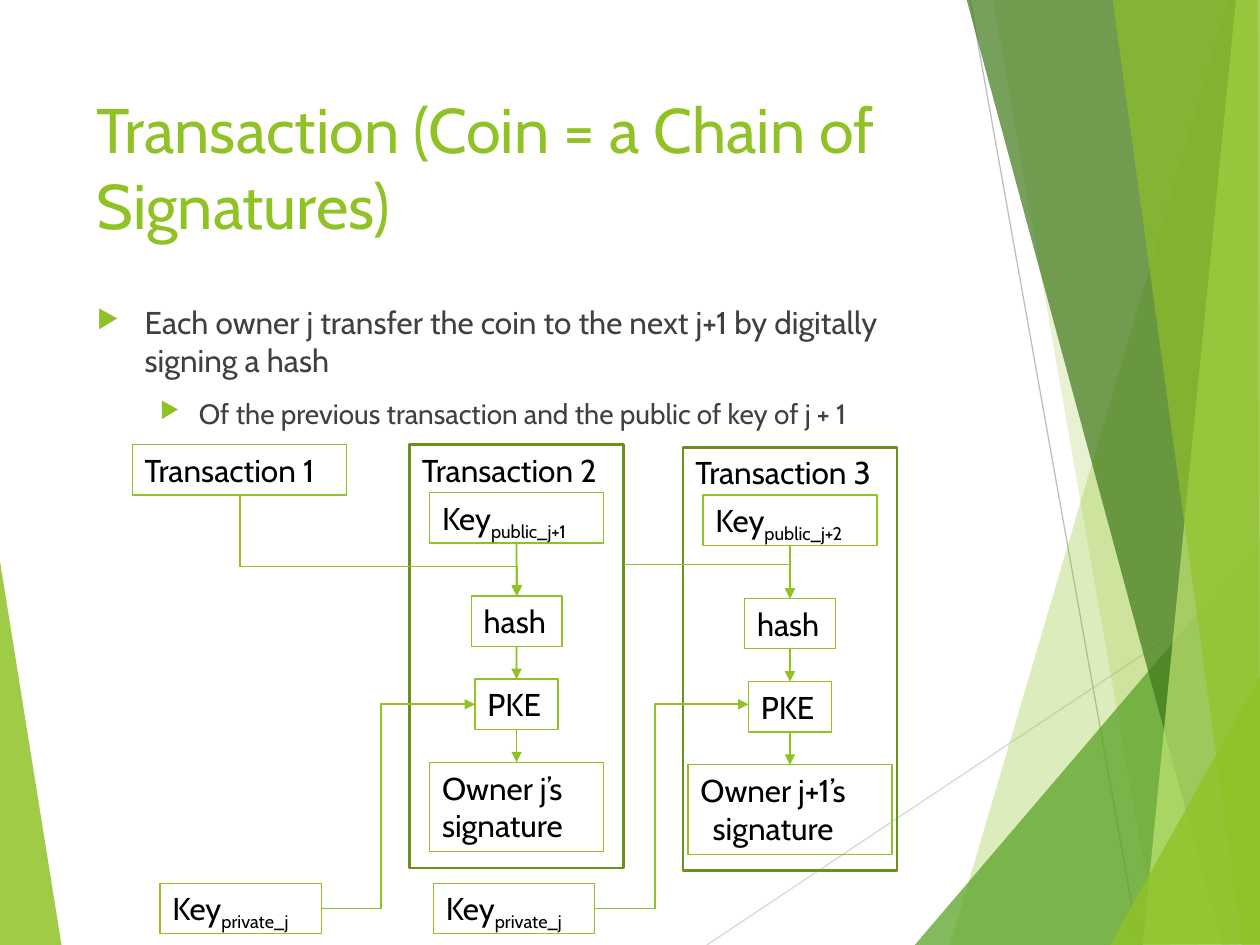
import pptx
import pptx.dml.color
import pptx.enum.shapes
import pptx.enum.text
import pptx.oxml
import pptx.oxml.ns
import pptx.util

Inches = pptx.util.Inches
Pt = pptx.util.Pt
RGBColor = pptx.dml.color.RGBColor
qn = pptx.oxml.ns.qn
CONNECTOR = pptx.enum.shapes.MSO_CONNECTOR
CENTER = pptx.enum.text.PP_ALIGN.CENTER
TOP, LEFT, BOTTOM, RIGHT = range(4)

LIME = RGBColor(0x90, 0xC2, 0x26)
GREEN = RGBColor(0x54, 0xA0, 0x21)
FOREST = RGBColor(0x3F, 0x78, 0x19)
PALE = RGBColor(0xC0, 0xE4, 0x74)
OLIVE = RGBColor(0x6B, 0x90, 0x1C)
SILVER = RGBColor(0xD9, 0xD9, 0xD9)
GRAY = RGBColor(0xBF, 0xBF, 0xBF)
CHARCOAL = RGBColor(0x40, 0x40, 0x40)
BLACK = RGBColor(0, 0, 0)

LABEL_FRAME = {
    "word_wrap": False,
    "auto_size": pptx.enum.text.MSO_AUTO_SIZE.SHAPE_TO_FIT_TEXT,
}
PROSE_FRAME = {
    "word_wrap": True,
    "auto_size": pptx.enum.text.MSO_AUTO_SIZE.NONE,
    "vertical_anchor": pptx.enum.text.MSO_ANCHOR.TOP,
}

LEFT_FACET = (LIME, 85, [(-0.01, 4.39), (0.49, 7.51), (-0.01, 7.5)])
RIGHT_FACETS = [
    (LIME, 30, [(9.75, 0), (7.54, 7.5), (10.02, 7.51), (10.01, 0.01)]),
    (LIME, 20, [(7.88, -0.01), (9.19, 7.5), (10.01, 7.5), (10.01, -0.01)]),
    (GREEN, 72, [(7.26, 7.5), (10, 4.29), (10.01, 7.5)]),
    (FOREST, 70, [(7.67, -0.01), (9.7, 7.5), (10.01, 7.49), (10.01, -0.01)]),
    (PALE, 70, [(9.81, -0.01), (9.07, 7.5), (10.01, 7.5), (10, -0.01)]),
    (LIME, 65, [(8.83, -0.01), (9.86, 7.5), (10, 7.5), (9.98, -0.01)]),
    (LIME, 80, [(8.81, 7.5), (10.01, 5.35), (10.01, 7.49)]),
]


def set_values(target, values):
    for name, value in values.items():
        setattr(target, name, value)


def add_child(parent, tag, **attributes):
    child = parent.makeelement(qn(tag), attributes)
    parent.append(child)
    return child


def add_facet(slide, color, opacity, corners):
    points = [(Inches(x), Inches(y)) for x, y in corners]
    builder = slide.shapes.build_freeform(*points[0])
    builder.add_line_segments(points[1:], close=True)
    facet = builder.convert_to_shape()
    facet.shadow.inherit = False
    facet.fill.solid()
    facet.fill.fore_color.rgb = color
    facet.line.fill.background()
    tint = next(facet.fill._xPr.iter(qn("a:srgbClr")))
    add_child(tint, "a:alpha", val=str(opacity * 1000))


def add_line(slide, start, end, color=LIME, width=1, kind=CONNECTOR.STRAIGHT, arrow=True):
    line = slide.shapes.add_connector(kind, *map(Inches, start + end))
    line.line.color.rgb = color
    line.line.width = Pt(width)
    if arrow:
        add_child(line.line._get_or_add_ln(), "a:tailEnd", type="triangle")
    add_child(line._element.spPr, "a:effectLst")
    return line


def add_elbow(slide, start, end, preset="bentConnector3", bend=None, turn=0):
    elbow = add_line(slide, start, end, kind=CONNECTOR.ELBOW)
    properties = elbow._element.spPr
    geometry = properties.find(qn("a:prstGeom"))
    geometry.set("prst", preset)
    if bend is not None:
        guides = geometry.find(qn("a:avLst"))
        add_child(guides, "a:gd", name="adj1", fmla=f"val {round(bend * 100000)}")
    if turn:
        properties.find(qn("a:xfrm")).set("rot", str(turn * 60000))


def add_run(paragraph, text, size, color):
    run = paragraph.add_run()
    run.text = text
    set_values(run.font, {"name": "Cabin", "size": Pt(size)})
    run.font.color.rgb = color
    return run


def add_label(slide, center, top, width, lines, subscript="", height=0.4, outlined=True):
    label = slide.shapes.add_textbox(
        *map(Inches, (center - width / 2, top, width, height)))
    if outlined:
        label.line.color.rgb = LIME
        label.line.width = Pt(0.75)
    frame = label.text_frame
    set_values(frame, LABEL_FRAME)
    add_run(frame.paragraphs[0], lines[0], 18, BLACK)
    if subscript:
        lowered = add_run(frame.paragraphs[0], subscript, 18, BLACK)
        lowered.font._element.set("baseline", "-25000")
    for text in lines[1:]:
        paragraph = frame.add_paragraph()
        paragraph.alignment = CENTER
        add_run(paragraph, text, 18, BLACK)
    return label


def add_prose(slide, left, top, width, height):
    frame = slide.shapes.add_textbox(
        *map(Inches, (left, top, width, height))).text_frame
    set_values(frame, PROSE_FRAME)
    return frame


def add_bullet(paragraph, text, size, margin, hang, level):
    properties = paragraph._p.get_or_add_pPr()
    properties.set("marL", str(Inches(margin)))
    properties.set("indent", str(-Inches(hang)))
    color = add_child(properties, "a:buClr")
    add_child(color, "a:srgbClr", val=str(LIME))
    add_child(properties, "a:buSzPct", val="80000")
    add_child(properties, "a:buChar", char="▶")
    paragraph.level = level
    if level:
        paragraph.space_before = Pt(10)
    add_run(paragraph, text, size, CHARCOAL)


def add_background(slide):
    add_facet(slide, *LEFT_FACET)
    add_line(slide, (5.61, 7.5), (10.01, 4.57), SILVER, 0.75, arrow=False)
    add_line(slide, (7.7, 0), (9.04, 7.5), GRAY, 0.75, arrow=False)
    for facet in RIGHT_FACETS:
        add_facet(slide, *facet)


def add_transaction(slide, number, center, top, public_key, owner, signature_width):
    add_label(slide, center, top, 1.7, [f"Transaction {number}"], outlined=False)
    steps = [
        add_label(slide, center, top + 0.38, 1.38, ["Key"], public_key),
        add_label(slide, center, top + 1.2, 0.72, ["hash"]),
        add_label(slide, center, top + 1.86, 0.66, ["PKE"]),
        add_label(slide, center, top + 2.52, signature_width,
                  [owner, "signature"], height=0.71),
    ]
    for upper, lower in zip(steps, steps[1:]):
        arrow = add_line(slide, (center, top), (center, top + 1))
        arrow.begin_connect(upper, BOTTOM)
        arrow.end_connect(lower, TOP)
    border = slide.shapes.add_shape(
        pptx.enum.shapes.MSO_SHAPE.RECTANGLE,
        *map(Inches, (center - 0.85, top, 1.7, 3.36)))
    border.shadow.inherit = False
    border.fill.background()
    border.line.color.rgb = OLIVE
    border.line.width = Pt(1.5)


def add_private_key(slide, center):
    add_label(slide, center, 7.01, 1.28, ["Key"], "private_j")
    add_elbow(slide, (center + 0.64, 7.21), (center + 1.86, 5.59), bend=0.39)


def main():
    deck = pptx.Presentation()
    set_values(deck, {"slide_width": Inches(10), "slide_height": Inches(7.5)})
    slide = deck.slides.add_slide(deck.slide_layouts[6])
    add_background(slide)

    title = add_prose(slide, 0.67, 0.67, 6.94, 1.44)
    add_run(title.paragraphs[0], "Transaction (Coin = a Chain of Signatures)", 36, LIME)

    body = add_prose(slide, 0.67, 2.36, 6.94, 4.24)
    add_bullet(body.paragraphs[0],
               "Each owner j transfer the coin to the next j+1 by digitally signing a hash",
               18, 0.38, 0.38, 0)
    add_bullet(body.add_paragraph(),
               "Of the previous transaction and the public of key of j + 1",
               16, 0.81, 0.31, 1)

    add_label(slide, 1.9, 3.53, 1.7, ["Transaction 1"])
    add_transaction(slide, 2, 4.1, 3.53, "public_j+1", "Owner j’s", 1.38)
    add_transaction(slide, 3, 6.27, 3.55, "public_j+2", "Owner j+1’s", 1.62)
    for center in (1.91, 4.08):
        add_private_key(slide, center)

    add_elbow(slide, (3.4, 3.23), (2.61, 5.43), bend=0.71, turn=270)
    add_elbow(slide, (4.95, 4.48), (6.27, 4.75), preset="bentConnector2")
    deck.save("out.pptx")


if __name__ == "__main__":
    main()
